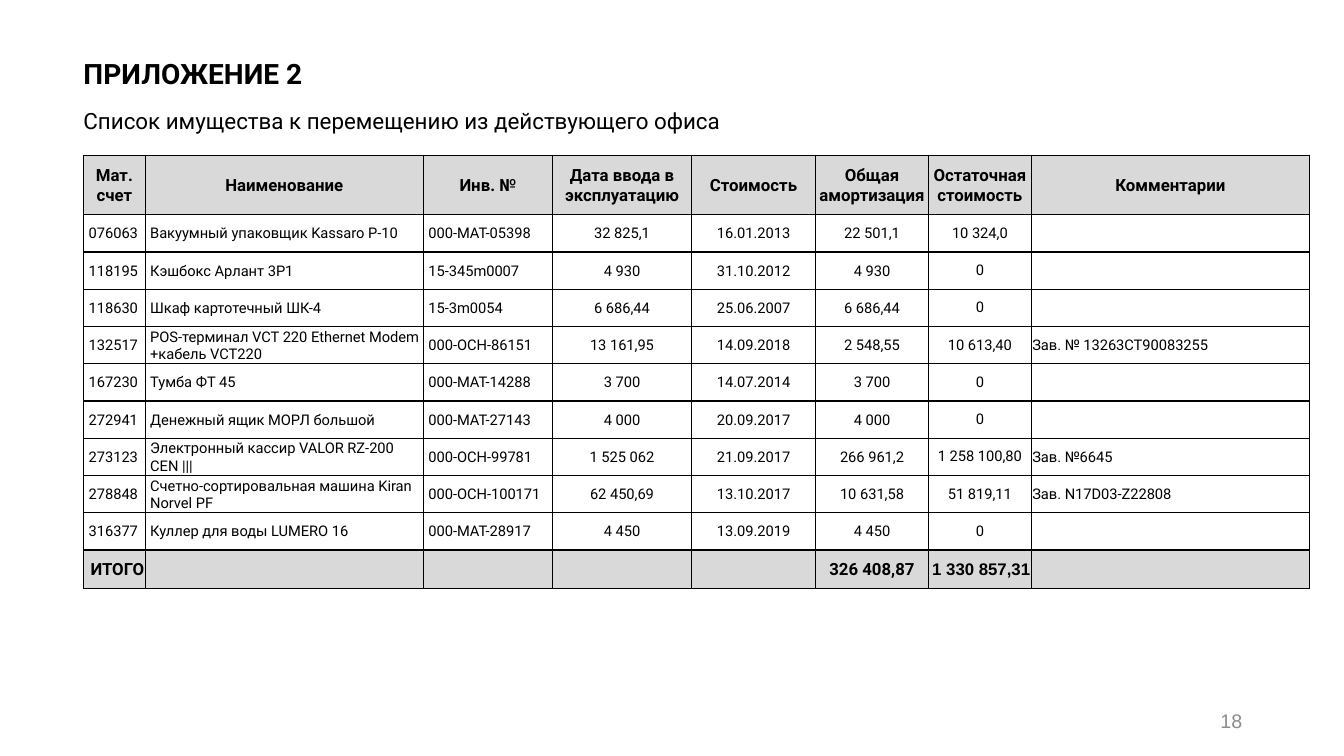
from lxml import etree
from pptx import Presentation, util as u
from pptx.dml.color import RGBColor
from pptx.enum import text
from pptx.oxml import ns

PX = 9144
HUES = {"ink": "000000", "head": "D9D9D9", "body": "FFFFFF", "page": "8C8C8C"}
LEFT, MID, RIGHT = text.PP_ALIGN.LEFT, text.PP_ALIGN.CENTER, text.PP_ALIGN.RIGHT
COLS = [61, 276, 128, 138, 123, 112, 102, 276]
HEAD = ["Мат. счет", "Наименование", "Инв. №", "Дата ввода в эксплуатацию",
        "Стоимость", "Общая амортизация", "Остаточная стоимость", "Комментарии"]
ITEMS = [
    ["076063", "Вакуумный упаковщик Kassaro P-10", "000-МАТ-05398", "32 825,1",
     "16.01.2013", "22 501,1", "10 324,0", ""],
    ["118195", "Кэшбокс Арлант 3Р1", "15-345m0007", "4 930",
     "31.10.2012", "4 930", "0", ""],
    ["118630", "Шкаф картотечный ШК-4", "15-3m0054", "6 686,44",
     "25.06.2007", "6 686,44", "0", ""],
    ["132517", "POS-терминал VCT 220 Ethernet Modem +кабель VCT220", "000-ОСН-86151",
     "13 161,95", "14.09.2018", "2 548,55", "10 613,40", "Зав. № 13263CT90083255"],
    ["167230", "Тумба ФТ 45", "000-МАТ-14288", "3 700",
     "14.07.2014", "3 700", "0", ""],
    ["272941", "Денежный ящик МОРЛ большой", "000-МАТ-27143", "4 000",
     "20.09.2017", "4 000", "0", ""],
    ["273123", "Электронный кассир VALOR RZ-200 CEN |||", "000-ОСН-99781",
     "1 525 062", "21.09.2017", "266 961,2", "1 258 100,80", "Зав. №6645"],
    ["278848", "Счетно-сортировальная машина Kiran Norvel PF", "000-ОСН-100171",
     "62 450,69", "13.10.2017", "10 631,58", "51 819,11", "Зав. N17D03-Z22808"],
    ["316377", "Куллер для воды LUMERO 16", "000-МАТ-28917", "4 450",
     "13.09.2019", "4 450", "0", ""],
]
TOTAL = ["ИТОГО", "", "", "", "", "326 408,87", "1 330 857,31", ""]


def write(para, words, size, bold=False, face="Roboto", hue="ink", align=LEFT):
    """Add one styled run to a paragraph."""
    para.alignment = align
    run = para.add_run()
    run.text = words
    font = run.font
    font.size, font.bold, font.name = u.Pt(size), bold, face
    font.color.rgb = RGBColor.from_string(HUES[hue])


def frame(slide, box):
    """Add a wrapping text box and return its text frame."""
    area = slide.shapes.add_textbox(*(n * PX for n in box)).text_frame
    area.word_wrap = True
    return area


def title(slide, box):
    """Place the heading and the line below it."""
    area = frame(slide, box)
    area.auto_size = text.MSO_AUTO_SIZE.SHAPE_TO_FIT_TEXT
    first, second = area.paragraphs[0], area.add_paragraph()
    write(first, "ПРИЛОЖЕНИЕ 2", 20, True)
    write(second, "Список имущества к перемещению из действующего офиса", 16)
    first.space_after = second.space_after = u.Pt(12)


def border(cell):
    """Draw a thin line on all four sides of a cell."""
    props = cell._tc.get_or_add_tcPr()
    for spot, side in enumerate(("lnL", "lnR", "lnT", "lnB")):
        line = etree.Element(ns.qn("a:" + side), w=str(u.Pt(1)))
        fill = etree.SubElement(line, ns.qn("a:solidFill"))
        etree.SubElement(fill, ns.qn("a:srgbClr"), val=HUES["ink"])
        props.insert(spot, line)


def style(cell, hue, pad):
    """Set the fill, insets and border of a cell."""
    cell.fill.solid()
    cell.fill.fore_color.rgb = RGBColor.from_string(HUES[hue])
    cell.vertical_anchor = text.MSO_ANCHOR.MIDDLE
    cell.margin_left = cell.margin_right = cell.margin_top = pad * PX
    cell.margin_bottom = 0
    border(cell)


def assets(slide, box):
    """Place the table of items with its head and total rows."""
    rows = [HEAD, *ITEMS, TOTAL]
    last = len(rows) - 1
    grid = slide.shapes.add_table(len(rows), len(COLS), *(n * PX for n in box)).table
    for col, width in zip(grid.columns, COLS):
        col.width = width * PX
    for r, row in enumerate(rows):
        grid.rows[r].height = {0: 59, last: 38}.get(r, 37) * PX
        strong = r in (0, last)
        for c, words in enumerate(row):
            cell = grid.cell(r, c)
            style(cell, "head" if strong else "body", 0 if c == 6 and not strong else 1)
            if not words:
                continue
            para = cell.text_frame.paragraphs[0]
            if strong:
                align = RIGHT if r == last and c in (0, 6) else MID
                face = "Arial" if r == last and c == 6 else "Roboto"
                write(para, words, 12, True, face, align=align)
            else:
                write(para, words, 10.5, align=MID if 3 <= c <= 6 else LEFT)
                if c < 3:
                    para._p.get_or_add_pPr().set("marL", str(4 * PX))


def number(slide, box):
    """Place the page number."""
    area = frame(slide, box)
    area.vertical_anchor = text.MSO_ANCHOR.MIDDLE
    write(area.paragraphs[0], "18", 14, False, "Arial", "page", RIGHT)


def main():
    """Build and save the slide."""
    deck = Presentation()
    deck.slide_width, deck.slide_height = 1333 * PX, 750 * PX
    slide = deck.slides.add_slide(deck.slide_layouts[6])
    assets(slide, (83, 154, sum(COLS), 430))
    number(slide, (942, 695, 300, 40))
    title(slide, (73, 51, 1227, 88))
    deck.save("out.pptx")


if __name__ == "__main__":
    main()
